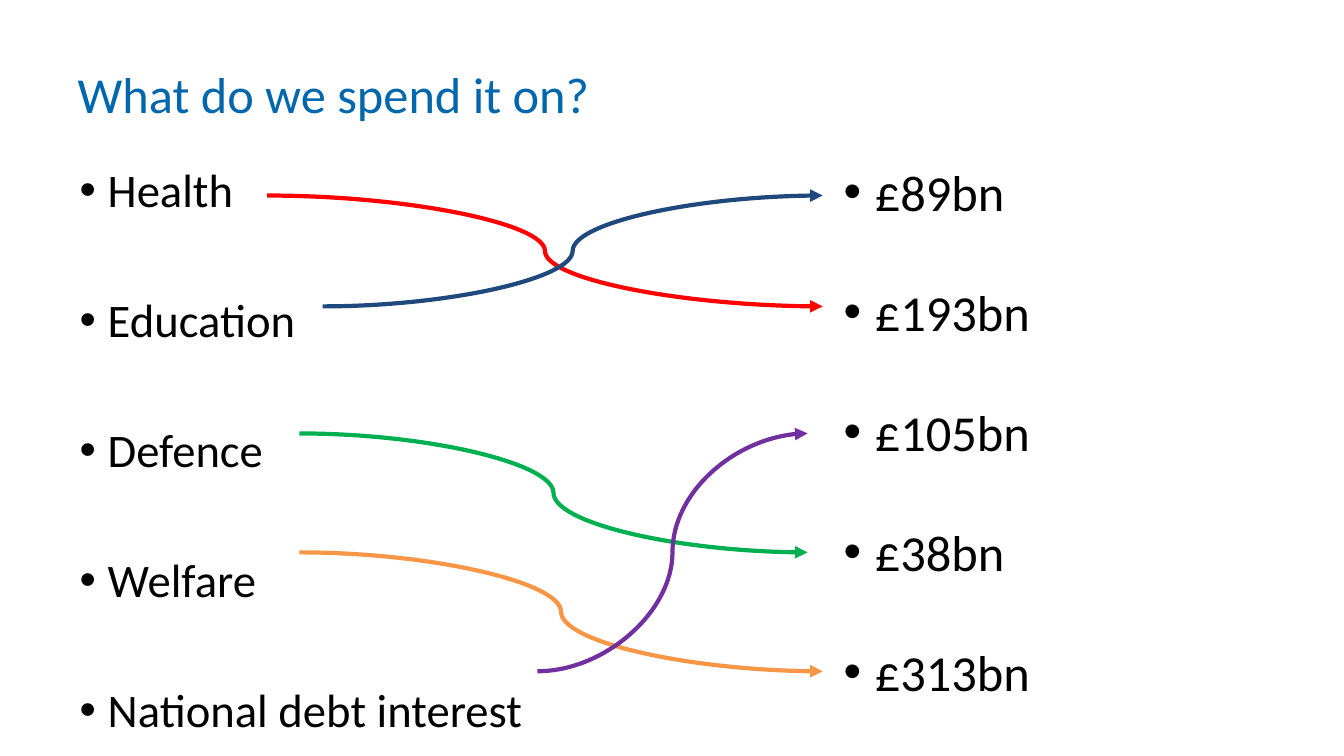
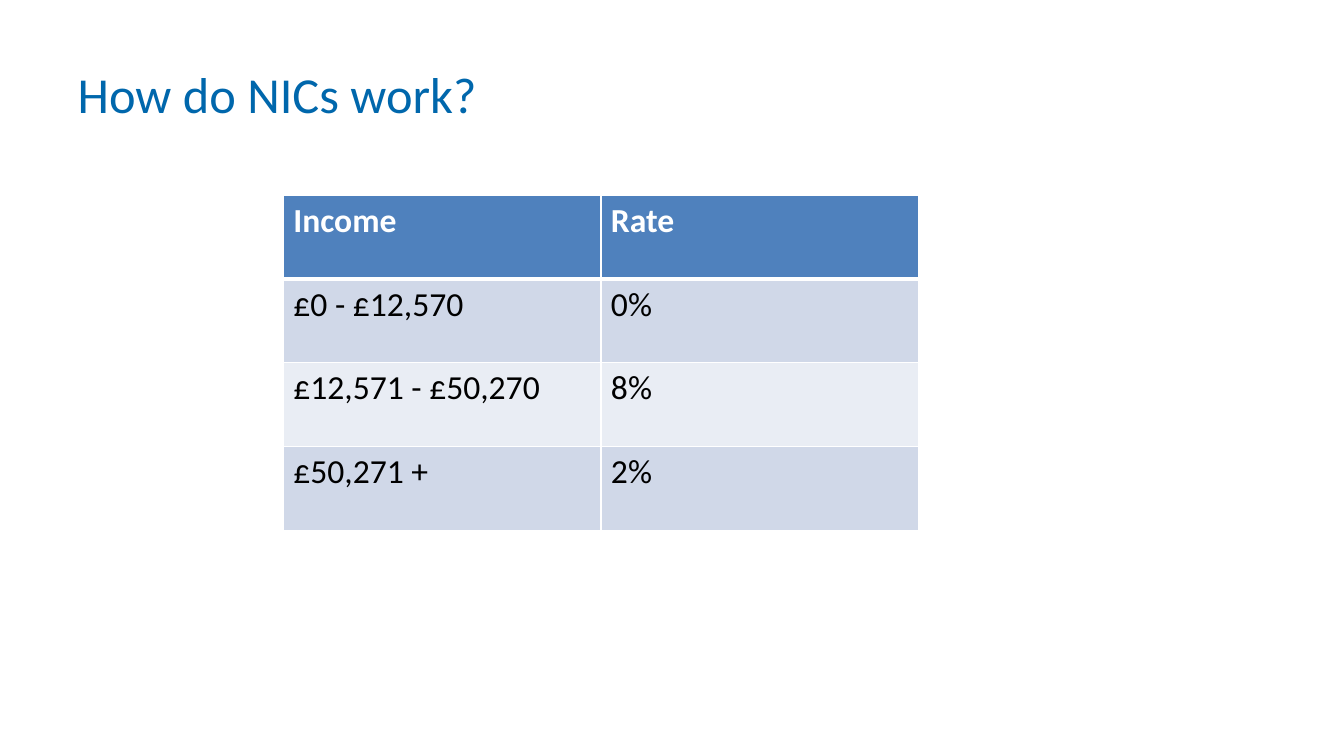
from lxml import etree
from pptx import Presentation
from pptx import util as u
from pptx.dml.color import RGBColor
from pptx.enum import shapes, text
from pptx.oxml.ns import qn

FONT = "Calibri"
TITLE_BLUE = RGBColor(0x00, 0x67, 0xAC)
BLACK = RGBColor(0x00, 0x00, 0x00)
WHITE = RGBColor(0xFF, 0xFF, 0xFF)
RED = RGBColor(0xFF, 0x00, 0x00)
NAVY = RGBColor(0x1F, 0x49, 0x7D)
GREEN = RGBColor(0x00, 0xB0, 0x50)
ORANGE = RGBColor(0xF7, 0x96, 0x46)
PURPLE = RGBColor(0x70, 0x30, 0xA0)
HEADER_BLUE = RGBColor(0x4F, 0x81, 0xBD)
BANDS = (RGBColor(0xD0, 0xD8, 0xE8), RGBColor(0xE9, 0xED, 0xF4))

SLIDE_SIZE = (13.33, 7.5)
TITLE_BOX = (0.67, 0.3, 10.72, 1.25)

# Spending areas and amounts, each a bulleted column
AREAS = ["Health", "Education", "Defence", "Welfare", "National debt interest"]
AMOUNTS = ["£89bn", "£193bn", "£105bn", "£38bn", "£313bn"]

# Heights at which the arrows start and end, one per row
ARROW_ROWS = (1.94, 3.04, 4.3, 5.48, 6.66)
# Start x, start row, end x, end row, colour
ARROWS = [
    (2.65, 0, 8.16, 1, RED),
    (3.2, 1, 8.16, 0, NAVY),
    (2.97, 2, 8.01, 3, GREEN),
    (2.97, 3, 8.16, 4, ORANGE),
    (5.33, 4, 8.01, 2, PURPLE),
]

RATES = [
    ("Income", "Rate"),
    ("£0 - £12,570", "0%"),
    ("£12,571 - £50,270", "8%"),
    ("£50,271 +", "2%"),
]
RATE_COLUMN, RATE_ROW = 3.15, 0.83


def inches(*lengths):
    return [u.Inches(length) for length in lengths]


def format_font(paragraph, size, color, bold=False):
    formats = {"name": FONT, "size": u.Pt(size), "bold": bold}
    for key, value in formats.items():
        setattr(paragraph.font, key, value)
    paragraph.font.color.rgb = color


def add_titled_slide(prs, wording):
    slide = prs.slides.add_slide(prs.slide_layouts[5])
    title = slide.shapes.title
    for side, value in zip(("left", "top", "width", "height"), inches(*TITLE_BOX)):
        setattr(title, side, value)
    title.text_frame.text = wording
    title.text_frame.vertical_anchor = text.MSO_ANCHOR.MIDDLE
    heading = title.text_frame.paragraphs[0]
    heading.alignment = text.PP_ALIGN.LEFT
    format_font(heading, 36, TITLE_BLUE)
    return slide


def add_bullets(slide, box, items, size, indent, gap):
    frame = slide.shapes.add_textbox(*inches(*box)).text_frame
    frame.word_wrap = True
    for index, item in enumerate(items):
        paragraph = frame.add_paragraph() if index else frame.paragraphs[0]
        paragraph.text = item
        paragraph.space_before = u.Pt(gap if index else 0)
        properties = paragraph._p.get_or_add_pPr()
        properties.set("marL", str(u.Inches(indent)))
        properties.set("indent", str(-u.Inches(indent)))
        etree.SubElement(properties, qn("a:buFont"), typeface="Arial")
        etree.SubElement(properties, qn("a:buChar"), char="•")
        format_font(paragraph, size, BLACK)


def add_curved_arrow(slide, start_x, start_row, end_x, end_row, color):
    ends = inches(start_x, ARROW_ROWS[start_row], end_x, ARROW_ROWS[end_row])
    arrow = slide.shapes.add_connector(shapes.MSO_CONNECTOR.CURVE, *ends)
    arrow.line.color.rgb = color
    arrow.line.width = u.Pt(3)
    etree.SubElement(arrow.line._get_or_add_ln(), qn("a:tailEnd"), type="triangle")
    etree.SubElement(arrow._element.spPr, qn("a:effectLst"))


def set_borders(cell, top, bottom):
    properties = cell._tc.get_or_add_tcPr()
    for side, width in {"L": 1, "R": 1, "T": top, "B": bottom}.items():
        line = etree.SubElement(properties, qn(f"a:ln{side}"), w=str(u.Pt(width)))
        fill = etree.SubElement(line, qn("a:solidFill"))
        etree.SubElement(fill, qn("a:srgbClr"), val=str(WHITE))


def add_rate_table(slide, left, top, rows):
    columns = len(rows[0])
    size = (columns * RATE_COLUMN, len(rows) * RATE_ROW)
    table = slide.shapes.add_table(
        len(rows), columns, *inches(left, top, *size)).table
    for r, values in enumerate(rows):
        header = r == 0
        for c, value in enumerate(values):
            cell = table.cell(r, c)
            cell.text = value
            # A thick rule parts the header from the rates
            set_borders(cell, top=3 if r == 1 else 1, bottom=3 if header else 1)
            cell.fill.solid()
            cell.fill.fore_color.rgb = HEADER_BLUE if header else BANDS[(r - 1) % 2]
            format_font(cell.text_frame.paragraphs[0], 24,
                        WHITE if header else BLACK, bold=header)


def main():
    prs = Presentation()
    prs.slide_width, prs.slide_height = inches(*SLIDE_SIZE)

    # Spending areas matched to amounts
    spending = add_titled_slide(prs, "What do we spend it on?")
    add_bullets(spending, (0.69, 1.55, 7.55, 5.65), AREAS, 33.3, 0.28, 52.9)
    add_bullets(spending, (8.27, 1.55, 2.7, 6.77 - 0.9), AMOUNTS, 36, 0.31, 42.5)
    for arrow in ARROWS:
        add_curved_arrow(spending, *arrow)

    # National insurance bands
    insurance = add_titled_slide(prs, "How do NICs work?")
    add_rate_table(insurance, 2.81, 1.94, RATES)

    prs.save("out.pptx")


if __name__ == "__main__":
    main()
